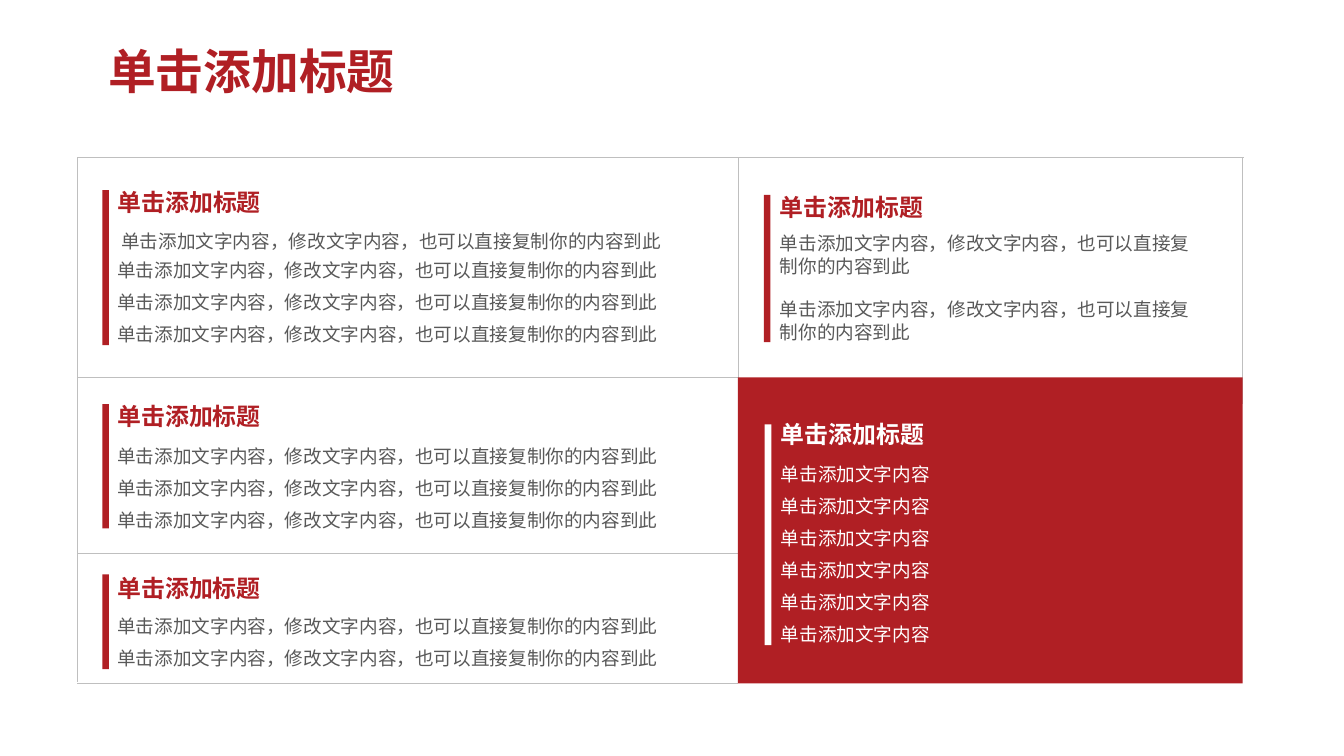
from lxml import etree
from pptx import Presentation
from pptx import util as u
from pptx.dml.color import RGBColor
from pptx.enum import shapes, text
from pptx.oxml.ns import qn

PX = 9144
FONT = "Noto Sans CJK SC"
RED, GRAY, RULE, WHITE = "B01F24", "595959", "BFBFBF", "FFFFFF"

HEADING = "单击添加标题"
SENTENCE = "单击添加文字内容，修改文字内容，也可以直接复制你的内容到此"
PHRASE = "单击添加文字内容"

SLIDE_SIZE = (1406, 791)
TITLE_BOX = (113, 43, 346, 61)
PANEL_BOX = (772, 395, 528, 320)
RULES = [
    (81, 165, 81, 714),
    (772, 165, 772, 714),
    (82, 395, 772, 395),
    (82, 579, 772, 579),
    (81, 165, 1301, 165),
    (81, 715, 772, 715),
    (1300, 165, 1300, 423),
]

TITLE_FORMAT = {"size": 36, "bold": True, "color": RED}
RED_HEADING = {"size": 18, "bold": True, "color": RED}
WHITE_HEADING = {"size": 18, "bold": True, "color": WHITE}
GRAY_BODY = {"size": 14, "bold": False, "color": GRAY}
WHITE_BODY = {"size": 14, "bold": False, "color": WHITE}

LINE_PITCH = 33.6
RED_STYLE = (RED, RED_HEADING, GRAY_BODY)
WHITE_STYLE = (WHITE, WHITE_HEADING, WHITE_BODY)
CARDS = [
    {"bar": (107, 199, 7, 162), "heading": (113, 191, 195, 40), "style": RED_STYLE,
     "groups": [((117, 235, 623, 34), LINE_PITCH, [SENTENCE]),
                ((113, 266, 594, 34), LINE_PITCH, [SENTENCE] * 3)]},
    {"bar": (107, 423, 7, 130), "heading": (113, 415, 250, 40), "style": RED_STYLE,
     "groups": [((113, 460, 594, 34), LINE_PITCH, [SENTENCE] * 3)]},
    {"bar": (107, 601, 7, 99), "heading": (113, 595, 250, 40), "style": RED_STYLE,
     "groups": [((113, 638, 594, 34), LINE_PITCH, [SENTENCE] * 2)]},
    {"bar": (799, 204, 7, 154), "heading": (806, 196, 269, 40), "style": RED_STYLE,
     "groups": [((806, 238, 450, 57), 69, [SENTENCE] * 2)]},
    {"bar": (800, 444, 7, 231), "heading": (807, 434, 195, 40), "style": WHITE_STYLE,
     "groups": [((807, 479, 236, 34), LINE_PITCH, [PHRASE] * 6)]},
]


def emu(lengths):
    return [round(length * PX) for length in lengths]


def rgb(color):
    return RGBColor.from_string(color)


def write(shape, words, style):
    frame = shape.text_frame
    frame.word_wrap = True
    frame.auto_size = text.MSO_AUTO_SIZE.SHAPE_TO_FIT_TEXT
    paragraph = frame.paragraphs[0]
    paragraph.alignment = text.PP_ALIGN.LEFT
    paragraph.line_spacing = u.Pt(round(style["size"] * 1.2))
    run = paragraph.add_run()
    run.text = words
    values = {"name": FONT, "size": u.Pt(style["size"]), "bold": style["bold"]}
    for name, value in values.items():
        setattr(run.font, name, value)
    run.font.color.rgb = rgb(style["color"])
    east_asian = etree.SubElement(run.font._element, qn("a:ea"))
    east_asian.set("typeface", FONT)


def add_text(slide, box, words, style):
    write(slide.shapes.add_textbox(*emu(box)), words, style)


def add_block(slide, box, color):
    shape = slide.shapes.add_shape(shapes.MSO_SHAPE.RECTANGLE, *emu(box))
    shape.shadow.inherit = False
    shape.fill.solid()
    shape.fill.fore_color.rgb = rgb(color)
    shape.line.fill.background()


def add_rule(slide, ends):
    connector = slide.shapes.add_connector(shapes.MSO_CONNECTOR.STRAIGHT, *emu(ends))
    connector.line.color.rgb = rgb(RULE)
    connector.line.width = u.Pt(0.5)
    etree.SubElement(connector._element.spPr, qn("a:effectLst"))


def add_title(slide):
    title = slide.shapes.title
    title.left, title.top, title.width, title.height = emu(TITLE_BOX)
    frame = title.text_frame
    for side in ("left", "top", "right", "bottom"):
        setattr(frame, f"margin_{side}", 0)
    frame.vertical_anchor = text.MSO_ANCHOR.MIDDLE
    write(title, HEADING, TITLE_FORMAT)


def add_card(slide, card):
    bar_color, heading_style, body_style = card["style"]
    add_text(slide, card["heading"], HEADING, heading_style)
    for (left, top, width, height), pitch, lines in card["groups"]:
        for index, line in enumerate(lines):
            add_text(slide, (left, top + index * pitch, width, height), line, body_style)
    add_block(slide, card["bar"], bar_color)


def main():
    presentation = Presentation()
    presentation.slide_width, presentation.slide_height = emu(SLIDE_SIZE)
    slide = presentation.slides.add_slide(presentation.slide_layouts[5])
    add_title(slide)
    for ends in RULES:
        add_rule(slide, ends)
    add_block(slide, PANEL_BOX, RED)
    for card in CARDS:
        add_card(slide, card)
    presentation.save("out.pptx")


if __name__ == "__main__":
    main()
